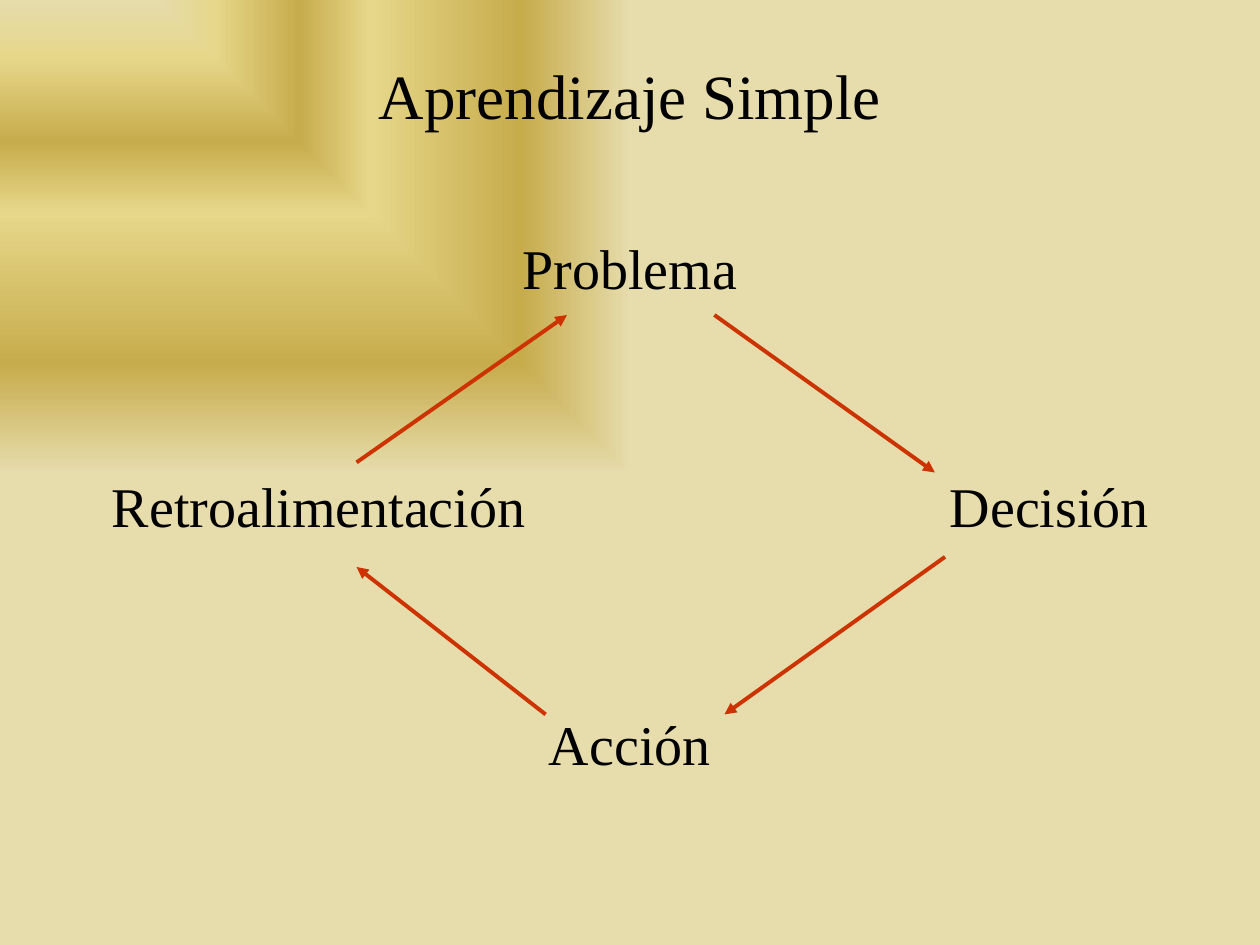
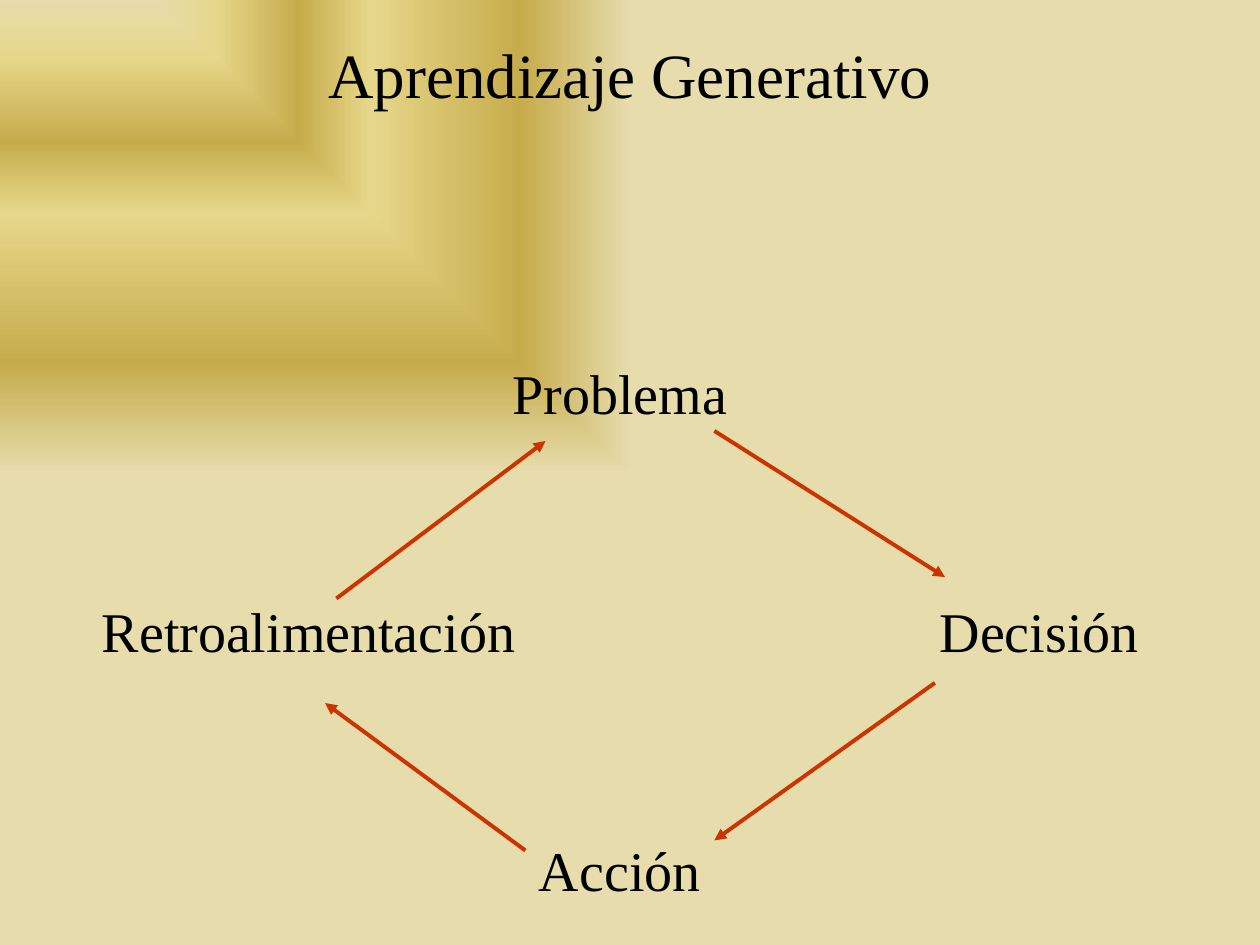
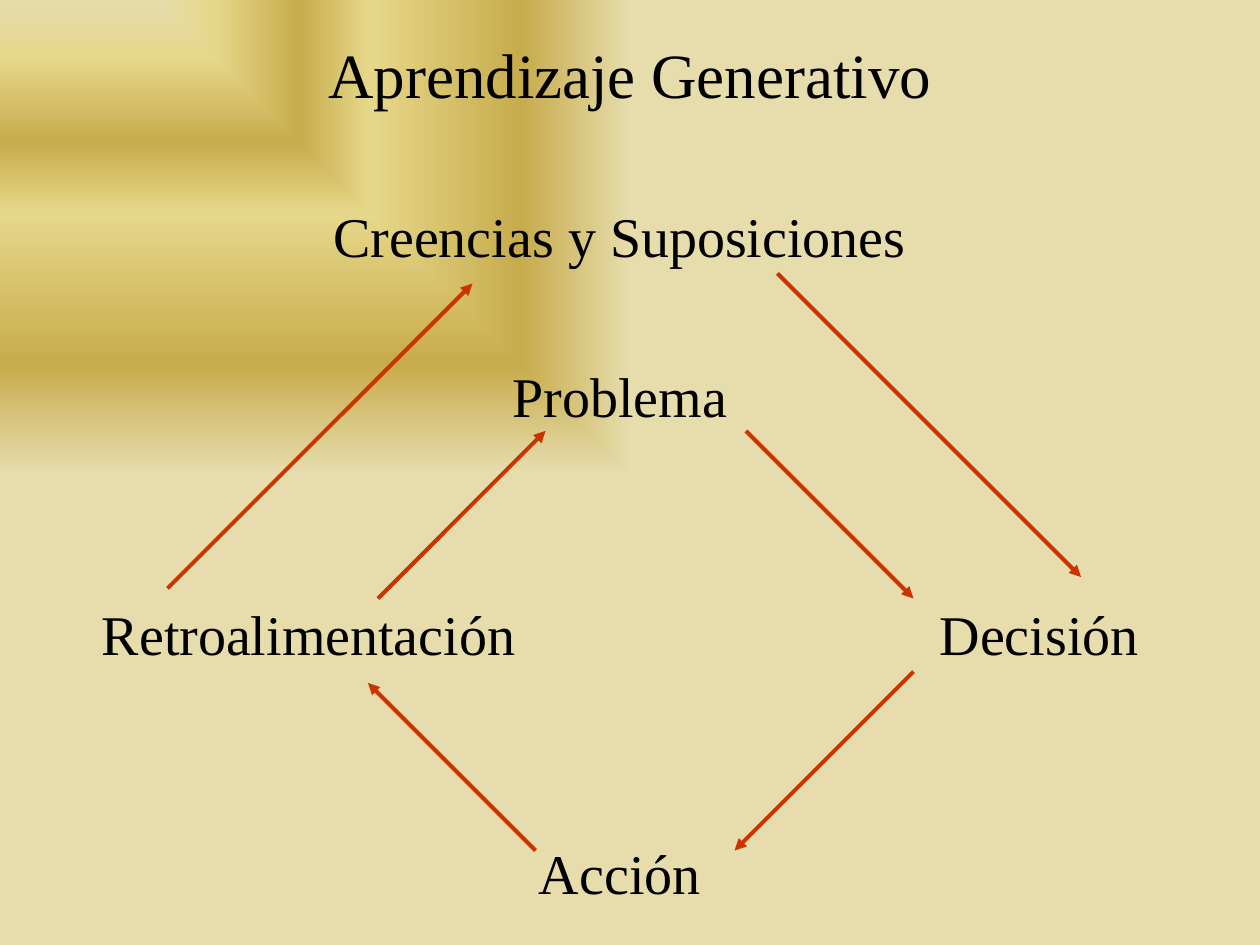
from lxml import etree
from pptx import Presentation
from pptx.dml.color import RGBColor
from pptx.enum.shapes import MSO_CONNECTOR
from pptx.enum.text import MSO_ANCHOR, PP_ALIGN
from pptx.oxml import parse_xml
from pptx.oxml.ns import nsdecls, qn
from pptx.util import Inches, Pt

# Shared style
BLACK = RGBColor(0x00, 0x00, 0x00)
RED = RGBColor(0xCC, 0x33, 0x00)
SAND = RGBColor(0xE6, 0xDC, 0xAC)
YELLOW = RGBColor(0xE6, 0xD7, 0x8A)
GOLD = RGBColor(0xC7, 0xAC, 0x4C)
STOPS = [(0, SAND), (12, YELLOW), (30, GOLD), (45, YELLOW), (77, GOLD), (100, SAND)]
FONT = "Times New Roman"
TITLE_FONT = {"name": FONT, "size": Pt(36)}
BODY_FONT = {"name": FONT, "size": Pt(32)}

# Text grid: the words of the cycle sit on evenly spaced rows
ROW = 44.86
LINE = 36.8
TOP_INSET = 0.1
SIDES = "Retroalimentación\tDecisión"

SLIDES = [
    {
        "title": "Aprendizaje Simple", "title_height": 1.5,
        "body": (0.75, 1.75, 8.5, 5),
        "words": [(0, "Problema"), (3, SIDES), (6, "Acción")],
        "arrows": [(5.67, 2.5, 7.42, 3.75), (7.5, 4.42, 5.75, 5.67),
                   (4.33, 5.67, 2.83, 4.5), (2.83, 3.67, 4.5, 2.5)],
    },
    {
        "title": "Aprendizaje Generativo", "title_height": 1.17,
        "body": (0.67, 1.5, 8.5, 4.25),
        "words": [(2, "Problema"), (5, SIDES), (8, "Acción")],
        "arrows": [(5.67, 3.42, 7.5, 4.58), (7.42, 5.42, 5.67, 6.67),
                   (4.17, 6.75, 2.58, 5.58), (2.67, 4.75, 4.33, 3.5)],
    },
    {
        "title": "Aprendizaje Generativo", "title_height": 1.17,
        "body": (0.67, 1.5, 8.5, 4.25),
        "words": [(0, "Creencias y Suposiciones"), (2, "Problema"),
                  (5, SIDES), (8, "Acción")],
        "arrows": [(3, 4.75, 4.33, 3.42), (5.92, 3.42, 7.25, 4.75),
                   (4.25, 6.75, 2.92, 5.42), (7.25, 5.33, 5.83, 6.75),
                   (1.33, 4.67, 3.75, 2.25), (6.17, 2.17, 8.58, 4.58)],
    },
]


def add_text(p, text, font):
    r = p.add_run()
    r.text = text
    for name, value in font.items():
        setattr(r.font, name, value)
    r.font.color.rgb = BLACK


prs = Presentation()
prs.slide_width, prs.slide_height = Inches(10), Inches(7.5)

# Background gradient on the master
master = prs.slide_master
master.background.fill.solid()
solid = master.element.find(".//" + qn("p:bgPr")).find(qn("a:solidFill"))
stops = "".join(f'<a:gs pos="{pos * 1000}"><a:srgbClr val="{color}"/></a:gs>'
                for pos, color in STOPS)
solid.getparent().replace(solid, parse_xml(
    f'<a:gradFill {nsdecls("a")} rotWithShape="0"><a:gsLst>{stops}</a:gsLst>'
    '<a:path path="rect"><a:fillToRect r="100000" b="100000"/></a:path></a:gradFill>'))

for spec_row in SLIDES:
    s = prs.slides.add_slide(prs.slide_layouts[5])

    # Title
    title = s.shapes.title
    title.left, title.top = Inches(0.75), Inches(0)
    title.width, title.height = Inches(8.5), Inches(spec_row["title_height"])
    tf = title.text_frame
    tf.vertical_anchor = MSO_ANCHOR.MIDDLE
    p = tf.paragraphs[0]
    p.alignment = PP_ALIGN.CENTER
    add_text(p, spec_row["title"], TITLE_FONT)

    # Words of the cycle
    tf = s.shapes.add_textbox(*map(Inches, spec_row["body"])).text_frame
    tf.word_wrap = True
    first_row = spec_row["words"][0][0]
    tf.margin_top = Inches(TOP_INSET) + Pt(first_row * ROW)
    previous = None
    for row, text in spec_row["words"]:
        if previous is None:
            p = tf.paragraphs[0]
        else:
            p = tf.add_paragraph()
            p.space_before = Pt(round((row - previous) * ROW - LINE, 1))
        previous = row
        p.alignment = PP_ALIGN.CENTER
        if text == SIDES:
            p.alignment = PP_ALIGN.LEFT
            pPr = p._p.get_or_add_pPr()
            pPr.set("marL", str(Inches(0.04)))
            tabs = etree.SubElement(pPr, qn("a:tabLst"))
            etree.SubElement(tabs, qn("a:tab"), pos=str(Inches(6.65)), algn="l")
        add_text(p, text, BODY_FONT)

    # Arrows
    for ends in spec_row["arrows"]:
        arrow = s.shapes.add_connector(MSO_CONNECTOR.STRAIGHT, *map(Inches, ends))
        arrow.line.color.rgb = RED
        arrow.line.width = Pt(2.25)
        etree.SubElement(arrow.line._get_or_add_ln(), qn("a:tailEnd"), type="triangle")
        etree.SubElement(arrow._element.spPr, qn("a:effectLst"))

prs.save("out.pptx")
